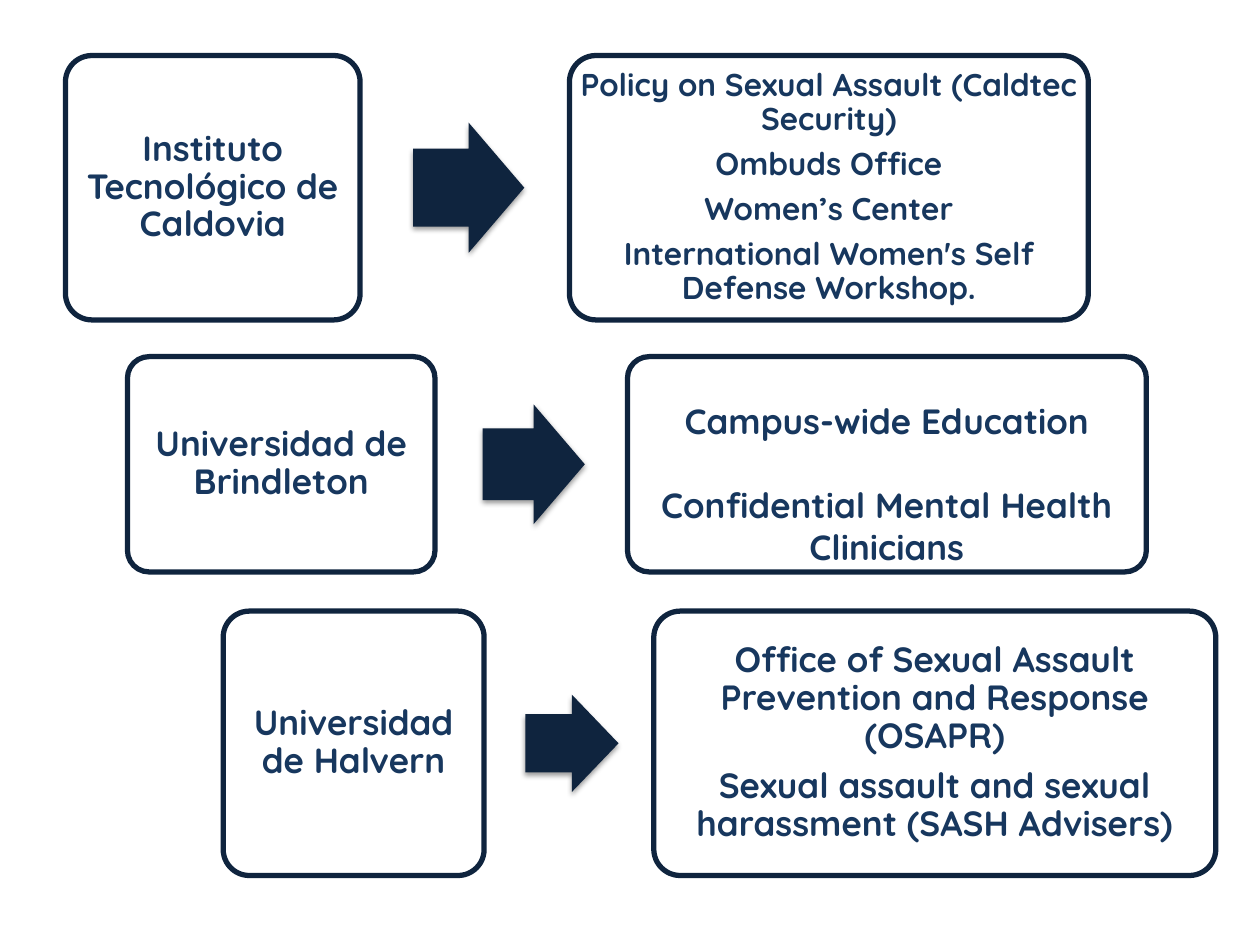
from lxml import etree
from pptx import Presentation
from pptx import util as u
from pptx.dml.color import RGBColor
from pptx.enum import shapes, text
from pptx.oxml import ns

NAVY = RGBColor(0x0F, 0x24, 0x3E)
TEXT_BLUE = RGBColor(0x17, 0x37, 0x5E)
FONT = "Quicksand"
BOX_MARGIN = 0.03


def add_box(slide, left, top, width, height, lines, size):
    shape = slide.shapes.add_shape(
        shapes.MSO_SHAPE.ROUNDED_RECTANGLE,
        u.Cm(left), u.Cm(top), u.Cm(width), u.Cm(height))
    shape.adjustments[0] = 0.1
    shape.shadow.inherit = False
    shape.fill.background()
    shape.line.color.rgb = NAVY
    shape.line.width = u.Pt(3)
    frame = shape.text_frame
    frame.word_wrap = True
    frame.vertical_anchor = text.MSO_ANCHOR.MIDDLE
    frame.margin_left = frame.margin_right = u.Cm(BOX_MARGIN)
    frame.margin_top = frame.margin_bottom = u.Cm(BOX_MARGIN)
    for index, line in enumerate(lines):
        paragraph = frame.add_paragraph() if index else frame.paragraphs[0]
        paragraph.alignment = text.PP_ALIGN.CENTER
        paragraph.line_spacing = 0.9
        paragraph.space_after = u.Pt(size * 0.35)
        run = paragraph.add_run()
        run.text = line
        run.font.name = FONT
        run.font.size = u.Pt(size)
        run.font.bold = True
        run.font.color.rgb = TEXT_BLUE
    return shape


def add_arrow(slide, left, top, width, height):
    shape = slide.shapes.add_shape(
        shapes.MSO_SHAPE.RIGHT_ARROW,
        u.Cm(left), u.Cm(top), u.Cm(width), u.Cm(height))
    shape.adjustments[0] = 0.6
    shape.adjustments[1] = 0.5
    shape.fill.solid()
    shape.fill.fore_color.rgb = NAVY
    shape.line.fill.background()
    shape.shadow.inherit = False
    effects = shape._element.spPr.find(ns.qn("a:effectLst"))
    shadow = etree.SubElement(
        effects, ns.qn("a:outerShdw"), blurRad=str(u.Pt(3.1)),
        dist=str(u.Pt(1.6)), dir="5400000", rotWithShape="0")
    color = etree.SubElement(shadow, ns.qn("a:srgbClr"), val="000000")
    etree.SubElement(color, ns.qn("a:alpha"), val="38000")


presentation = Presentation()
presentation.slide_width = u.Cm(25.4)
presentation.slide_height = u.Cm(19.05)
slide = presentation.slides.add_slide(presentation.slide_layouts[6])

rows = [
    (1.12, 5.33, (1.32, 5.94), (8.33, 2.24, 2.62), (11.48, 10.46),
     "Instituto Tecnológico de Caldovia", 18,
     ["Policy on Sexual Assault (Caldtec Security)", "Ombuds Office",
      "Women’s Center", "International Women's Self Defense Workshop."]),
    (7.19, 4.34, (2.57, 6.2), (9.73, 2.06, 2.41), (12.65, 10.46),
     "Universidad de Brindleton", 20,
     ["Campus-wide Education", "Confidential Mental Health Clinicians"]),
    (12.32, 5.33, (4.5, 5.26), (10.59, 1.88, 1.96), (13.18, 11.33),
     "Universidad de Halvern", 20,
     ["Office of Sexual Assault Prevention and Response (OSAPR)",
      "Sexual assault and sexual harassment (SASH Advisers)"]),
]

measure_boxes = []
for top, height, university, arrow, measures, name, size, lines in rows:
    add_box(slide, university[0], top, university[1], height, [name], 20)
    arrow_left, arrow_width, arrow_height = arrow
    add_arrow(slide, arrow_left, top + (height - arrow_height) / 2,
              arrow_width, arrow_height)
    measure_boxes.append(
        add_box(slide, measures[0], top, measures[1], height, lines, size))

education_frame = measure_boxes[1].text_frame
education_frame.margin_top = u.Cm(0.8)
for paragraph in education_frame.paragraphs:
    paragraph.line_spacing = 1.0
    paragraph.space_after = u.Pt(0)
education_frame.paragraphs[1].space_before = u.Pt(24)

presentation.save("out.pptx")
